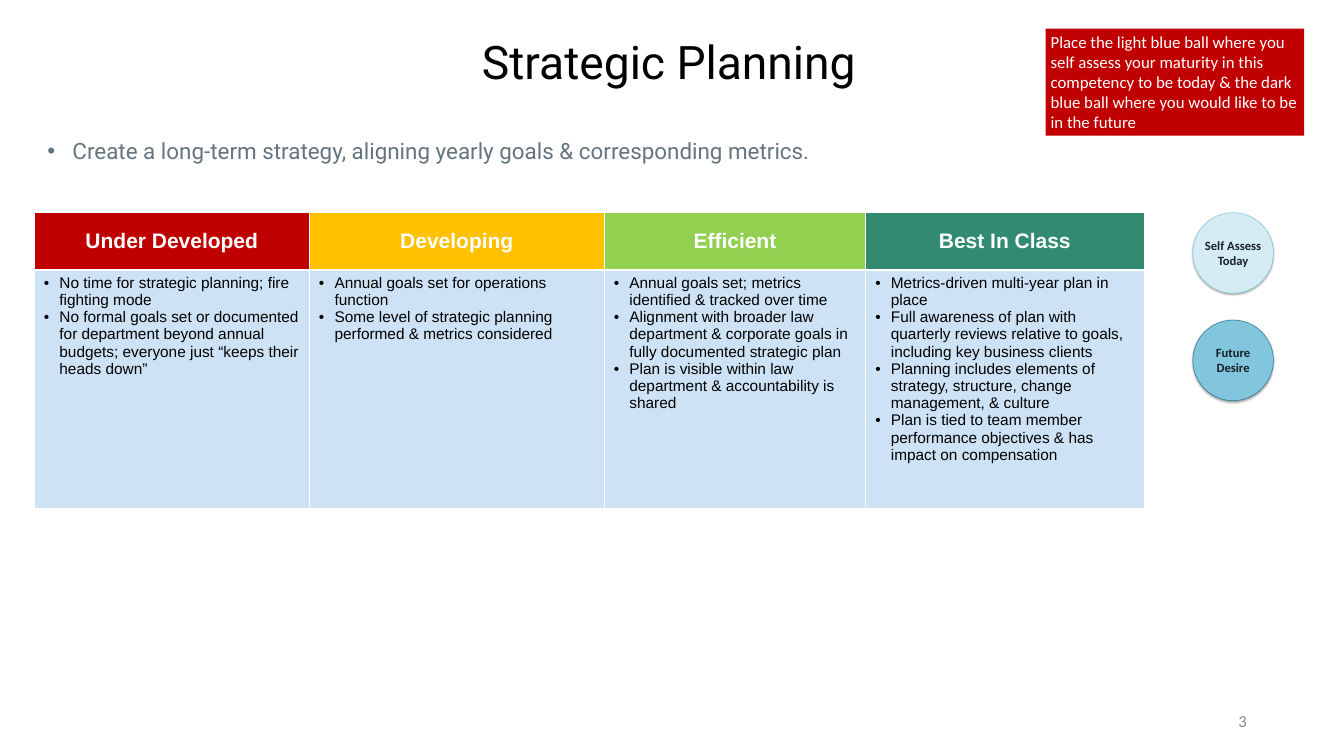
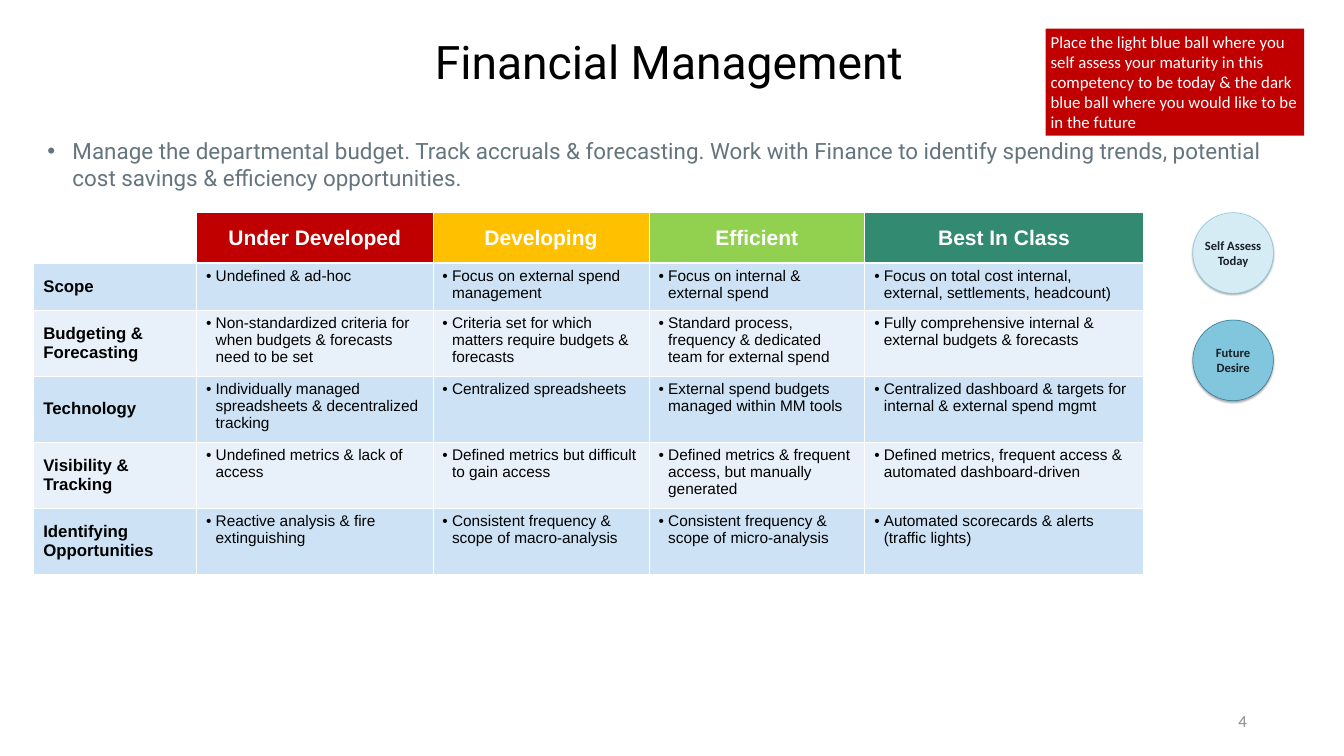
"""Build two competency maturity slides with a rating table each."""
from lxml.etree import SubElement
from pptx import Presentation
from pptx.dml.color import RGBColor
from pptx.enum.shapes import MSO_SHAPE
from pptx.enum.text import MSO_ANCHOR, MSO_AUTO_SIZE, PP_ALIGN
from pptx.oxml.ns import qn
from pptx.util import Pt

PX = 9144
WHITE = RGBColor(0xFF, 0xFF, 0xFF)
BLACK = RGBColor(0x00, 0x00, 0x00)
GRAY = RGBColor(0x8C, 0x8C, 0x8C)
SLATE = RGBColor(0x65, 0x75, 0x7D)
INK = RGBColor(0x18, 0x1F, 0x26)
RED = RGBColor(0xC0, 0x00, 0x00)
AMBER = RGBColor(0xFF, 0xC0, 0x00)
LIME = RGBColor(0x92, 0xD0, 0x50)
GREEN = RGBColor(0x32, 0x8B, 0x71)
BANDS = (RGBColor(0xCD, 0xE3, 0xF5), RGBColor(0xE8, 0xF1, 0xFA))
PALE = RGBColor(0xD5, 0xEC, 0xF4)
SKY = RGBColor(0x82, 0xC6, 0xDE)
TEAL = RGBColor(0x27, 0x76, 0x92)

LEVELS = [("Under Developed", RED), ("Developing", AMBER),
          ("Efficient", LIME), ("Best In Class", GREEN)]
BALLS = [("Self Assess Today", PALE, SKY), ("Future Desire", SKY, TEAL)]
NOTE = ("Place the light blue ball where you self assess your maturity in this "
        "competency to be today & the dark blue ball where you would like to be "
        "in the future")

SLIDES = [
    {
        "title": "Strategic Planning",
        "number": "3",
        "lead": "Create a long-term strategy, aligning yearly goals & corresponding metrics.",
        "deep": 64,
        "left": 68,
        "cols": [546, 585, 519, 552],
        "rows": [113, 473],
        "hang": 31,
        "body": [
            (None,
             ["No time for strategic planning; fire fighting mode",
              "No formal goals set or documented for department beyond annual "
              "budgets; everyone just “keeps their heads down”"],
             ["Annual goals set for operations function",
              "Some level of strategic planning performed & metrics considered"],
             ["Annual goals set; metrics identified & tracked over time",
              "Alignment with broader law department & corporate goals in fully "
              "documented strategic plan",
              "Plan is visible within law department & accountability is shared"],
             ["Metrics-driven multi-year plan in place",
              "Full awareness of plan with quarterly reviews relative to goals, "
              "including key business clients",
              "Planning includes elements of strategy, structure, change "
              "management, & culture",
              "Plan is tied to team member performance objectives & has impact "
              "on compensation"]),
        ],
    },
    {
        "title": "Financial Management",
        "number": "4",
        "lead": "Manage the departmental budget. Track accruals & forecasting. Work with "
                "Finance to identify spending trends, potential cost savings & "
                "efficiency opportunities.",
        "deep": 118,
        "left": 67,
        "cols": [323, 469, 429, 428, 553],
        "rows": [100, 93] + [131] * 4,
        "hang": 19,
        "body": [
            ("Scope",
             "Undefined & ad-hoc",
             "Focus on external spend management",
             "Focus on internal & external spend",
             "Focus on total cost internal, external, settlements, headcount)"),
            ("Budgeting & Forecasting",
             "Non-standardized criteria for when budgets & forecasts need to be set",
             "Criteria set for which matters require budgets & forecasts",
             "Standard process, frequency & dedicated team for external spend",
             "Fully comprehensive internal & external budgets & forecasts"),
            ("Technology",
             "Individually managed spreadsheets & decentralized tracking",
             "Centralized spreadsheets",
             "External spend budgets managed within MM tools",
             "Centralized dashboard & targets for internal & external spend mgmt"),
            ("Visibility & Tracking",
             "Undefined metrics & lack of access",
             "Defined metrics but difficult to gain access",
             "Defined metrics & frequent access, but manually generated",
             "Defined metrics, frequent access & automated dashboard-driven"),
            ("Identifying Opportunities",
             "Reactive analysis & fire extinguishing",
             "Consistent frequency & scope of macro-analysis",
             "Consistent frequency & scope of micro-analysis",
             "Automated scorecards & alerts (traffic lights)"),
        ],
    },
]


def px(*nums):
    return [num * PX for num in nums]


def write(frame, text, size=22, font="Arial", color=BLACK, bold=False,
          align=PP_ALIGN.LEFT, hang=0):
    frame.word_wrap = True
    for pos, line in enumerate([text] if isinstance(text, str) else text):
        para = frame.add_paragraph() if pos else frame.paragraphs[0]
        para.alignment = align
        if hang:
            props = para._p.get_or_add_pPr()
            props.set("marL", str(hang * PX))
            props.set("indent", str(-hang * PX))
            SubElement(props, qn("a:buFont"), typeface="Arial")
            SubElement(props, qn("a:buChar"), char="•")
        run = para.add_run()
        run.text = line
        run.font.size = Pt(size)
        run.font.name = font
        run.font.bold = bold
        run.font.color.rgb = color


def inset(frame, side, top):
    frame.margin_left = frame.margin_right = side * PX
    frame.margin_top = frame.margin_bottom = top * PX


def add_title(slide, text):
    title = slide.shapes.title
    title.left, title.top, title.width, title.height = px(67, 74, 2521, 93)
    frame = title.text_frame
    frame.auto_size = MSO_AUTO_SIZE.NONE
    frame.vertical_anchor = MSO_ANCHOR.MIDDLE
    inset(frame, 27, 13)
    write(frame, text, size=66, font="Roboto", align=PP_ALIGN.CENTER)


def add_text(slide, box, text, anchor=MSO_ANCHOR.TOP, **look):
    frame = slide.shapes.add_textbox(*px(*box)).text_frame
    frame.vertical_anchor = anchor
    write(frame, text, **look)


def add_note(slide):
    note = slide.shapes.add_shape(MSO_SHAPE.RECTANGLE, *px(2075, 57, 513, 212))
    note.shadow.inherit = False
    note.fill.solid()
    note.fill.fore_color.rgb = RED
    note.line.fill.background()
    note.text_frame.vertical_anchor = MSO_ANCHOR.TOP
    write(note.text_frame, NOTE, size=24, font="Calibri", color=WHITE)


def add_ball(slide, top, text, fill, edge):
    ball = slide.shapes.add_shape(MSO_SHAPE.OVAL, *px(2367, top, 160, 160))
    ball.fill.solid()
    ball.fill.fore_color.rgb = fill
    ball.line.color.rgb = edge
    ball.line.width = Pt(0.75)
    ball.shadow.inherit = False
    effects = ball._element.spPr.find(qn("a:effectLst"))
    shade = SubElement(effects, qn("a:outerShdw"), blurRad=str(Pt(3.1)),
                       dist=str(Pt(1.8)), dir="5400000", rotWithShape="0")
    tone = SubElement(shade, qn("a:srgbClr"), val="000000")
    SubElement(tone, qn("a:alpha"), val="35000")
    frame = ball.text_frame
    frame.vertical_anchor = MSO_ANCHOR.MIDDLE
    inset(frame, 0, 0)
    write(frame, text, size=18, font="Calibri", color=INK, bold=True,
          align=PP_ALIGN.CENTER)


def style(cell, fill, anchor, base=1):
    inset(cell, 19, 9)
    cell.vertical_anchor = anchor
    props = cell._tc.get_or_add_tcPr()
    for side, width in zip("LRTB", (1, 1, 1, base)):
        line = SubElement(props, qn(f"a:ln{side}"), w=str(Pt(width)))
        solid = SubElement(line, qn("a:solidFill"))
        SubElement(solid, qn("a:srgbClr"), val=str(WHITE))
    if fill is None:
        cell.fill.background()
    else:
        cell.fill.solid()
        cell.fill.fore_color.rgb = fill


def add_grid(slide, data):
    cols, rows = data["cols"], data["rows"]
    box = px(data["left"], 422, sum(cols), sum(rows))
    table = slide.shapes.add_table(len(rows), len(cols), *box).table
    table.first_row = table.horz_banding = False
    for col, width in zip(table.columns, cols):
        col.width = width * PX
    for row, height in zip(table.rows, rows):
        row.height = height * PX
    first = len(cols) - len(LEVELS)
    if first:
        style(table.cell(0, 0), None, MSO_ANCHOR.MIDDLE, base=3)
    for col, (name, fill) in enumerate(LEVELS, first):
        cell = table.cell(0, col)
        style(cell, fill, MSO_ANCHOR.MIDDLE, base=3)
        write(cell.text_frame, name, size=30, color=WHITE, bold=True,
              align=PP_ALIGN.CENTER)
    for row, (label, *items) in enumerate(data["body"], 1):
        fill = BANDS[(row - 1) % 2]
        if label:
            cell = table.cell(row, 0)
            style(cell, fill, MSO_ANCHOR.MIDDLE)
            write(cell.text_frame, label, size=24, bold=True)
        for col, item in enumerate(items, first):
            cell = table.cell(row, col)
            style(cell, fill, MSO_ANCHOR.TOP)
            write(cell.text_frame, item, hang=data["hang"])


def main():
    deck = Presentation()
    deck.slide_width, deck.slide_height = px(2667, 1500)
    for data in SLIDES:
        slide = deck.slides.add_slide(deck.slide_layouts[5])
        add_text(slide, (1884, 1390, 600, 80), data["number"], MSO_ANCHOR.MIDDLE,
                 size=24, font="Calibri", color=GRAY, align=PP_ALIGN.RIGHT)
        add_title(slide, data["title"])
        add_text(slide, (84, 267, 2504, data["deep"]), data["lead"],
                 size=32, font="Roboto", color=SLATE, hang=50)
        for pos, ball in enumerate(BALLS):
            add_ball(slide, 422 + 213 * pos, *ball)
        add_note(slide)
        add_grid(slide, data)
    deck.save("out.pptx")


if __name__ == "__main__":
    main()
